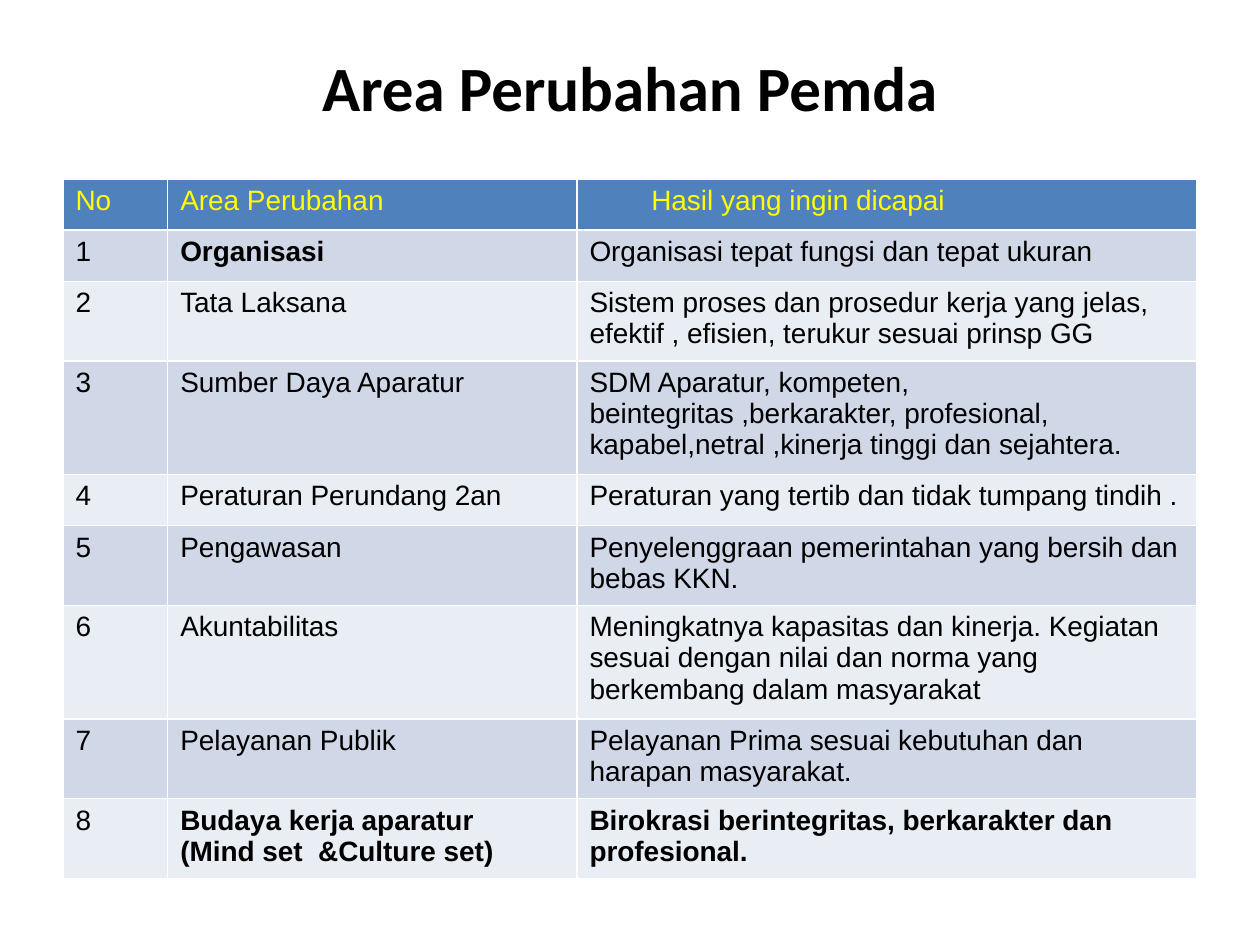
from pptx import Presentation
from pptx import util as u
from pptx.dml.color import RGBColor
from pptx.enum import text

COLORS = {
    "text": "000000",
    "header_text": "FFFF00",
    "header": "4F81BD",
    "odd": "D0D8E8",
    "even": "E9EDF4",
}

HEADER = ("No", "Area Perubahan", "Hasil yang ingin dicapai")
AREAS = [
    ("Organisasi", "Organisasi tepat fungsi dan tepat ukuran"),
    ("Tata Laksana", "Sistem proses dan prosedur kerja yang jelas, efektif , efisien, "
                     "terukur sesuai prinsp GG"),
    ("Sumber Daya Aparatur", "SDM Aparatur, kompeten, beintegritas ,berkarakter, profesional, "
                             "kapabel,netral ,kinerja tinggi dan sejahtera."),
    ("Peraturan Perundang 2an", "Peraturan yang tertib dan tidak tumpang tindih ."),
    ("Pengawasan", "Penyelenggraan pemerintahan yang bersih dan bebas KKN."),
    ("Akuntabilitas", "Meningkatnya kapasitas dan kinerja. Kegiatan sesuai dengan nilai "
                      "dan norma yang berkembang dalam masyarakat"),
    ("Pelayanan Publik", "Pelayanan Prima sesuai kebutuhan dan harapan masyarakat."),
    ("Budaya kerja aparatur\n(Mind set  &Culture set)",
     "Birokrasi berintegritas, berkarakter dan profesional."),
]
BOLD_CELLS = {(1, 1), (8, 1), (8, 2)}
COLUMN_WIDTHS = (2.11, 8.25, 12.5)
ROW_HEIGHT = 1.03


class SlideBuilder:
    """Holds the slide being built and its text styling."""

    def __init__(self, slide):
        self.slide = slide

    def set_text(self, tf, content, font, size, color="text", bold=False, align=None):
        tf.text = content
        for p in tf.paragraphs:
            p.alignment = align
            # Runs carry the font so the table style cannot override it.
            for r in p.runs:
                r.font.name, r.font.size, r.font.bold = font, u.Pt(size), bold
                r.font.color.rgb = RGBColor.from_string(COLORS[color])

    def title(self, content, left, top, width, height):
        box = self.slide.shapes.add_textbox(u.Cm(left), u.Cm(top), u.Cm(width), u.Cm(height))
        tf = box.text_frame
        tf.word_wrap = True
        tf.vertical_anchor = text.MSO_ANCHOR.MIDDLE
        self.set_text(tf, content, "Calibri", 36, bold=True, align=text.PP_ALIGN.CENTER)

    def table(self, rows, left, top):
        frame = self.slide.shapes.add_table(
            len(rows), len(COLUMN_WIDTHS), u.Cm(left), u.Cm(top),
            u.Cm(sum(COLUMN_WIDTHS)), u.Cm(ROW_HEIGHT * len(rows)))
        table = frame.table
        for column, width in zip(table.columns, COLUMN_WIDTHS):
            column.width = u.Cm(width)
        for i, row in enumerate(rows):
            fill = "header" if i == 0 else "odd" if i % 2 else "even"
            for j, content in enumerate(row):
                cell = table.cell(i, j)
                cell.fill.solid()
                cell.fill.fore_color.rgb = RGBColor.from_string(COLORS[fill])
                self.set_text(cell.text_frame, content, "Arial", 16,
                              "text" if i else "header_text", (i, j) in BOLD_CELLS)
        return table


def main():
    prs = Presentation()
    prs.slide_width, prs.slide_height = u.Cm(25.4), u.Cm(19.05)
    builder = SlideBuilder(prs.slides.add_slide(prs.slide_layouts[6]))
    builder.title("Area Perubahan Pemda", 1.27, 0.76, 22.86, 1.98)
    rows = [HEADER] + [(str(n), *area) for n, area in enumerate(AREAS, 1)]
    table = builder.table(rows, 1.27, 3.61)
    table.cell(0, 2).margin_left = u.Cm(1.5)
    prs.save("out.pptx")


if __name__ == "__main__":
    main()
